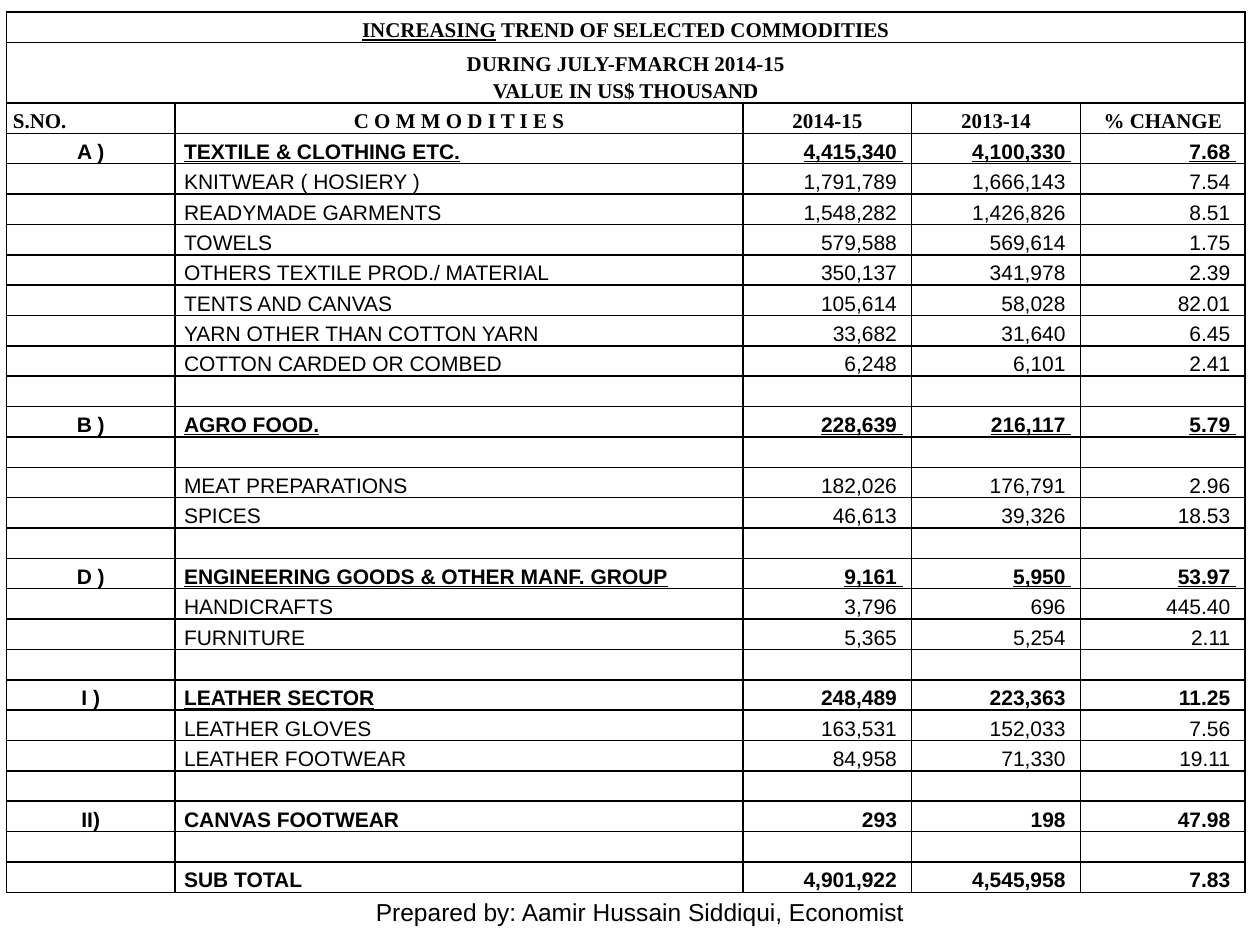
from dataclasses import dataclass

from lxml import etree
from pptx import Presentation
from pptx.dml.color import RGBColor
from pptx.enum.text import MSO_ANCHOR, PP_ALIGN
from pptx.oxml.ns import qn
from pptx.util import Cm, Pt

LEFT, CENTER, RIGHT = PP_ALIGN.LEFT, PP_ALIGN.CENTER, PP_ALIGN.RIGHT
BOTTOM = MSO_ANCHOR.BOTTOM


@dataclass
class Theme:
    ink: str = "000000"
    heading_font: str = "Times New Roman"
    body_font: str = "Arial"
    table_size: int = 12
    credit_size: int = 14
    border_width: int = 1
    line_spacing: float = 1.15


theme = Theme()


def format_span(span, font, size, bold=False, underline=False):
    span.font.name = font
    span.font.size = Pt(size)
    span.font.bold = bold
    span.font.underline = underline
    span.font.color.rgb = RGBColor.from_string(theme.ink)


def prepare_cell(cell, side_margin):
    cell.vertical_anchor = BOTTOM
    cell.margin_left = cell.margin_right = Cm(side_margin)
    cell.margin_top = cell.margin_bottom = 0
    properties = cell._tc.get_or_add_tcPr()
    for side in ("a:lnL", "a:lnR", "a:lnT", "a:lnB"):
        line = etree.SubElement(properties, qn(side), w=str(Pt(theme.border_width)))
        fill = etree.SubElement(line, qn("a:solidFill"))
        etree.SubElement(fill, qn("a:srgbClr"), val=theme.ink)
    cell.fill.background()
    # Empty cells keep the table's type size so that rows stay low
    para = cell.text_frame.paragraphs[0]
    etree.SubElement(para._p, qn("a:endParaRPr"), sz=str(theme.table_size * 100))


# Commodity rows: underlined columns, then the five cells; () is a blank row
ALL, NAME, NONE = (1, 2, 3, 4), (1,), ()
title_lines = [
    ["INCREASING TREND OF SELECTED COMMODITIES"],
    ["DURING JULY-FMARCH 2014-15", "VALUE IN US$ THOUSAND"],
]
underlined_word = "INCREASING"
headers = ["S.NO.", "C O M M O D I T I E S", "2014-15", "2013-14", "% CHANGE"]
commodities = [
    (ALL, "A )", "TEXTILE & CLOTHING ETC.", "4,415,340", "4,100,330", "7.68"),
    (None, "", "KNITWEAR ( HOSIERY )", "1,791,789", "1,666,143", "7.54"),
    (None, "", "READYMADE GARMENTS", "1,548,282", "1,426,826", "8.51"),
    (None, "", "TOWELS", "579,588", "569,614", "1.75"),
    (None, "", "OTHERS TEXTILE PROD./ MATERIAL", "350,137", "341,978", "2.39"),
    (None, "", "TENTS AND CANVAS", "105,614", "58,028", "82.01"),
    (None, "", "YARN OTHER THAN COTTON YARN", "33,682", "31,640", "6.45"),
    (None, "", "COTTON CARDED OR COMBED", "6,248", "6,101", "2.41"),
    (),
    (ALL, "B )", "AGRO FOOD.", "228,639", "216,117", "5.79"),
    (),
    (None, "", "MEAT PREPARATIONS", "182,026", "176,791", "2.96"),
    (None, "", "SPICES", "46,613", "39,326", "18.53"),
    (),
    (ALL, "D )", "ENGINEERING GOODS & OTHER MANF. GROUP", "9,161", "5,950", "53.97"),
    (None, "", "HANDICRAFTS", "3,796", "696", "445.40"),
    (None, "", "FURNITURE", "5,365", "5,254", "2.11"),
    (),
    (NAME, "I )", "LEATHER SECTOR", "248,489", "223,363", "11.25"),
    (None, "", "LEATHER GLOVES", "163,531", "152,033", "7.56"),
    (None, "", "LEATHER FOOTWEAR", "84,958", "71,330", "19.11"),
    (),
    (NONE, "II)", "CANVAS FOOTWEAR", "293", "198", "47.98"),
    (),
    (NONE, "", "SUB TOTAL", "4,901,922", "4,545,958", "7.83"),
]

deck = Presentation()
deck.slide_width, deck.slide_height = Cm(25.4), Cm(19.05)
page = deck.slides.add_slide(deck.slide_layouts[6])

# Table grid: equal rows, the second one double height
column_widths = [3.4, 11.45, 3.4, 3.4, 3.32]
heading_rows = len(title_lines) + 1
row_count = heading_rows + len(commodities)
table_height = Cm(17.75)
row_height = table_height // (row_count + 1)
table = page.shapes.add_table(
    row_count, len(column_widths), Cm(0.13), Cm(0.24), Cm(sum(column_widths)), table_height
).table
table.first_row = table.horz_banding = False
for column, width in zip(table.columns, column_widths):
    column.width = Cm(width)
for row_index, row in enumerate(table.rows):
    row.height = row_height * (2 if row_index == 1 else 1)
    for cell in row.cells:
        prepare_cell(cell, 0.13 if row_index < heading_rows else 0.18)

# Title rows across the full width
for row_index, lines in enumerate(title_lines):
    cell = table.cell(row_index, 0)
    cell.merge(table.cell(row_index, len(column_widths) - 1))
    cell.text_frame.text = "\n".join(lines)
    for para in cell.text_frame.paragraphs:
        para.alignment, para.line_spacing = CENTER, theme.line_spacing
        if para.text.startswith(underlined_word):
            rest = para.text[len(underlined_word):]
            para.runs[0].text = underlined_word
            para.add_run().text = rest
        for span in para.runs:
            format_span(span, theme.heading_font, theme.table_size, True,
                        span.text == underlined_word)

# Column headers
for column_index, header in enumerate(headers):
    para = table.cell(heading_rows - 1, column_index).text_frame.paragraphs[0]
    para.text = header
    para.alignment = CENTER if column_index else LEFT
    para.line_spacing = theme.line_spacing
    format_span(para.runs[0], theme.heading_font, theme.table_size, True)

# Commodity groups and their items
alignments = [CENTER, LEFT, RIGHT, RIGHT, RIGHT]
for row_index, commodity in enumerate(commodities, heading_rows):
    if not commodity:
        continue
    underlined_columns, *values = commodity
    is_group = underlined_columns is not None
    for column_index, value in enumerate(values):
        if not value:
            continue
        para = table.cell(row_index, column_index).text_frame.paragraphs[0]
        para.alignment = alignments[column_index]
        para.line_spacing = theme.line_spacing
        para.text = value + " " if para.alignment == RIGHT else value
        format_span(para.runs[0], theme.body_font, theme.table_size, is_group,
                    is_group and column_index in underlined_columns)

# Credit line
box = page.shapes.add_textbox(Cm(7.19), Cm(17.96), Cm(11.43), Cm(0.89))
box.text_frame.word_wrap = True
box.text_frame.text = "Prepared by: Aamir Hussain Siddiqui, Economist"
para = box.text_frame.paragraphs[0]
para.alignment = CENTER
format_span(para.runs[0], theme.body_font, theme.credit_size)

deck.save("out.pptx")
